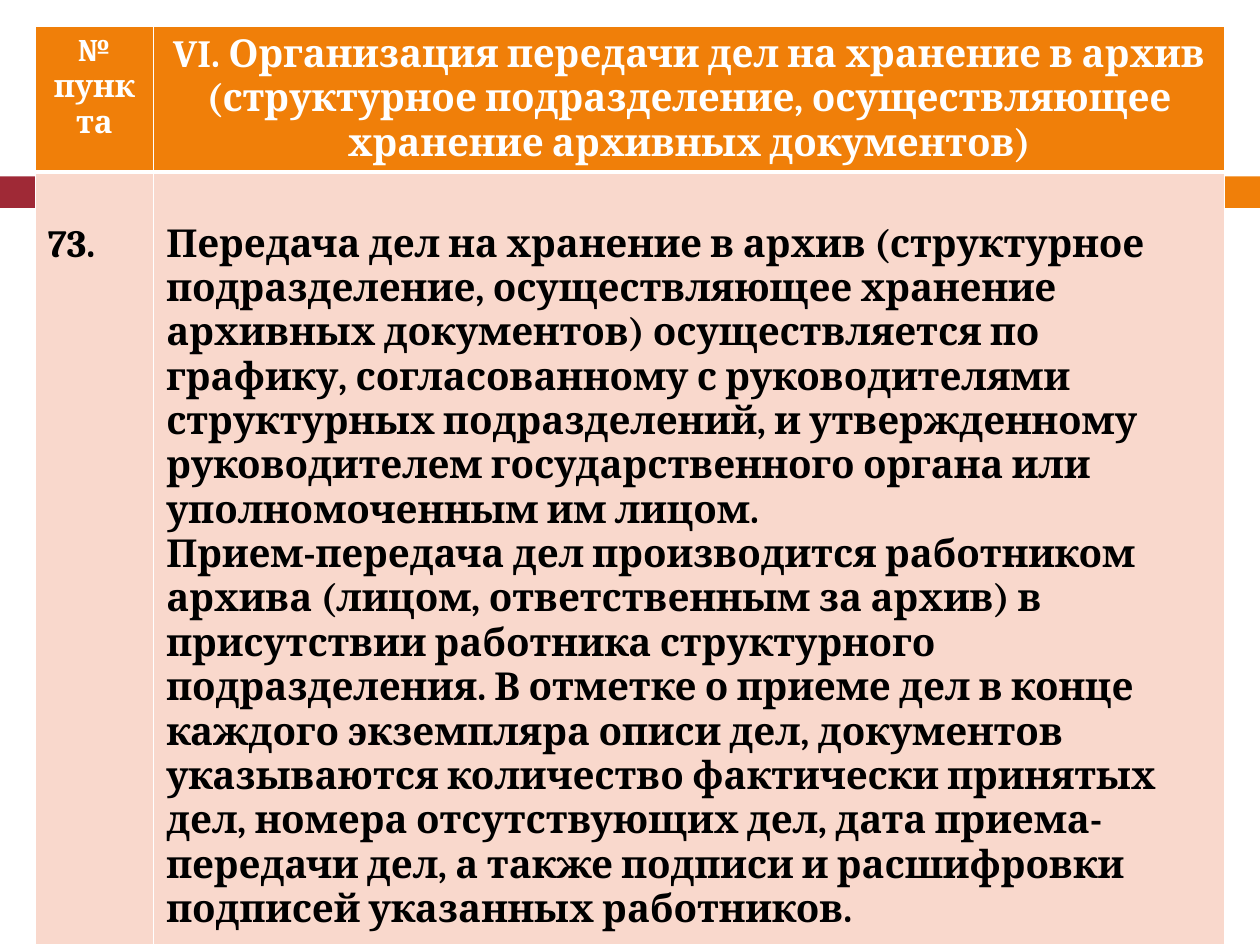
import pptx
import pptx.dml.color
import pptx.enum.shapes
import pptx.enum.text
import pptx.oxml
import pptx.oxml.ns
import pptx.util

Inches = pptx.util.Inches
Pt = pptx.util.Pt
ALIGN = pptx.enum.text.PP_ALIGN

COLORS = {"red": "9F2936", "orange": "F07F09", "pink": "F9D8CC",
          "white": "FFFFFF", "black": "000000"}
FONT = "Cambria"
COLS = (0.94, 8.5)
ROWS = (1.15, 6.13)
HEAD = (
    ("№ пункта", 18),
    ("VI. Организация передачи дел на хранение в архив (структурное "
     "подразделение, осуществляющее хранение архивных документов)", 22),
)
BODY = (
    ("73.",),
    ("Передача дел на хранение в архив (структурное подразделение, "
     "осуществляющее хранение архивных документов) осуществляется по графику, "
     "согласованному с руководителями структурных подразделений, и "
     "утвержденному руководителем государственного органа или "
     "уполномоченным им лицом.",
     "Прием-передача дел производится работником архива (лицом, ответственным "
     "за архив) в присутствии работника структурного подразделения. В отметке "
     "о приеме дел в конце каждого экземпляра описи дел, документов "
     "указываются количество фактически принятых дел, номера отсутствующих "
     "дел, дата приема-передачи дел, а также подписи и расшифровки подписей "
     "указанных работников."),
)


def color(name):
    return pptx.dml.color.RGBColor.from_string(COLORS[name])


def add_band(slide, left, top, width, height):
    """Draw the red and orange strip with a gap between its parts."""
    start = 0.65
    for x, w, name in ((0, 0.58, "red"), (start, width - start, "orange")):
        bar = slide.shapes.add_shape(
            pptx.enum.shapes.MSO_SHAPE.RECTANGLE,
            Inches(left + x), Inches(top), Inches(w), Inches(height))
        bar.shadow.inherit = False
        bar.fill.solid()
        bar.fill.fore_color.rgb = color(name)
        bar.line.fill.background()


def set_lines(cell, top, bottom):
    """Give the cell white borders; top and bottom are widths in points."""
    props = cell._tc.get_or_add_tcPr()
    sides = (("L", 1), ("R", 1), ("T", top), ("B", bottom))
    for place, (side, width) in enumerate(sides):
        props.insert(place, pptx.oxml.parse_xml(
            f'<a:ln{side} {pptx.oxml.ns.nsdecls("a")} w="{Pt(width)}">'
            f'<a:solidFill><a:srgbClr val="{COLORS["white"]}"/></a:solidFill>'
            f'</a:ln{side}>'))


def fill_cell(cell, texts, size, ink, paper, align):
    cell.fill.solid()
    cell.fill.fore_color.rgb = color(paper)
    frame = cell.text_frame
    for index, text in enumerate(texts):
        para = frame.add_paragraph() if index else frame.paragraphs[0]
        para.alignment = align
        run = para.add_run()
        run.text = text
        run.font.name = FONT
        run.font.size = Pt(size)
        run.font.bold = True
        run.font.color.rgb = color(ink)


def add_rules(slide, left, top, width, height):
    """Place the table of numbered rules."""
    table = slide.shapes.add_table(
        len(ROWS), len(COLS), Inches(left), Inches(top),
        Inches(width), Inches(height)).table
    for col, size in zip(table.columns, COLS):
        col.width = Inches(size)
    for row, size in zip(table.rows, ROWS):
        row.height = Inches(size)
    for index, (text, size) in enumerate(HEAD):
        cell = table.cell(0, index)
        fill_cell(cell, (text,), size, "white", "orange", ALIGN.CENTER)
        set_lines(cell, 1, 3)
    for index, texts in enumerate(BODY):
        cell = table.cell(1, index)
        fill_cell(cell, texts, 22, "black", "pink", ALIGN.LEFT)
        cell.margin_top = Inches(0.4)
        set_lines(cell, 3, 1)


def main():
    deck = pptx.Presentation()
    deck.slide_width = Inches(10)
    deck.slide_height = Inches(7.5)
    slide = deck.slides.add_slide(deck.slide_layouts[6])
    add_band(slide, 0, 1.4, 10, 0.25)
    add_rules(slide, 0.28, 0.21, sum(COLS), sum(ROWS))
    deck.save("out.pptx")


if __name__ == "__main__":
    main()
